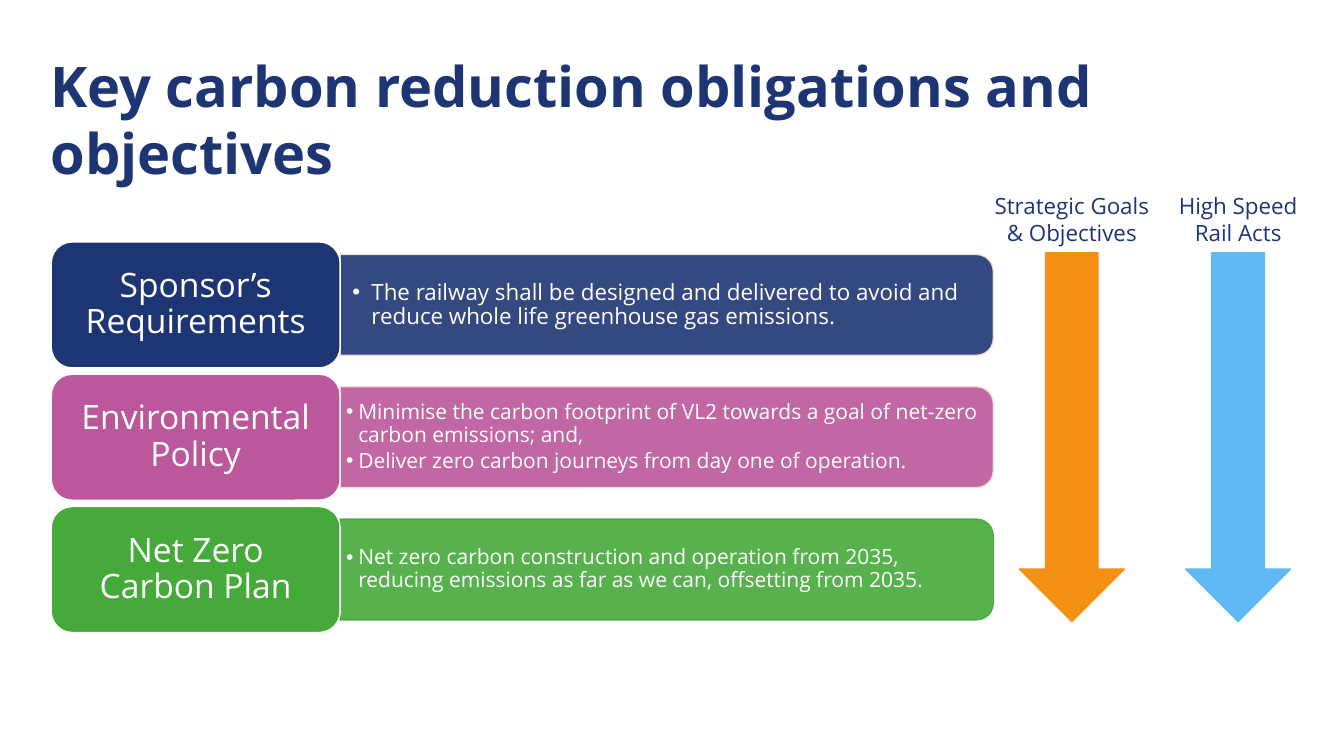
from lxml import etree
from pptx import Presentation, util as u
from pptx.dml.color import RGBColor
from pptx.enum import shapes, text
from pptx.oxml.ns import qn

FONT = "Open Sans"
COLOURS = {
    "navy": "1D3673", "pink": "BB579B", "green": "45AA3A", "orange": "F49114",
    "sky": "5EB9F4", "peach": "FBDCCC", "white": "FFFFFF",
}

# The page is a grid of 160 columns and 90 rows.
PAGE_WIDTH, PAGE_HEIGHT = u.Inches(13.33), u.Inches(7.5)
COLUMN, ROW = PAGE_WIDTH / 160, PAGE_HEIGHT / 90

NAME_LEFT, NAME_TOP, NAME_WIDTH, NAME_HEIGHT = 6.1, 28.8, 34.4, 15
ROW_PITCH = 15.75
BAR_LEFT, BAR_WIDTH, BAR_HEIGHT = NAME_LEFT + NAME_WIDTH, 77.75, 12
DETAIL_WIDTH, DETAIL_HEIGHT = 77.15, 10.8
ARROW_TOP, ARROW_WIDTH, ARROW_HEIGHT = 30.1, 12.5, 43.9
LABEL_TOP, LABEL_HEIGHT = 22.9, 6.25

# name, colour, bar outline, text size, bullet indent and side inset in inches, points
OBLIGATIONS = [
    ("Sponsor’s Requirements", "navy", "peach", 16, 0.19, 0.12,
     ["The railway shall be designed and delivered to avoid and reduce whole life "
      "greenhouse gas emissions."]),
    ("Environmental Policy", "pink", "peach", 15, 0.12, 0.06,
     ["Minimise the carbon footprint of VL2 towards a goal of net-zero carbon "
      "emissions; and,",
      "Deliver zero carbon journeys from day one of operation."]),
    ("Net Zero Carbon Plan", "green", "green", 15, 0.12, 0.06,
     ["Net zero carbon construction and operation from 2035, reducing emissions as "
      "far as we can, offsetting from 2035."]),
]

# label, label width, centre column, colour
DRIVERS = [
    ("Strategic Goals & Objectives", 18.85, 127.6, "orange"),
    ("High Speed Rail Acts", 14.3, 147.4, "sky"),
]


def grid(left, top, width, height):
    return (u.Emu(round(left * COLUMN)), u.Emu(round(top * ROW)),
            u.Emu(round(width * COLUMN)), u.Emu(round(height * ROW)))


def colour(name):
    return RGBColor.from_string(COLOURS[name])


def set_opacity(fill_parent, percent):
    """Make the solid colour inside an XML element partly see-through."""
    for value in fill_parent.find(qn("a:solidFill")):
        etree.SubElement(value, qn("a:alpha"), val=str(percent * 1000))


def add_bullet(para, indent):
    properties = para._p.get_or_add_pPr()
    properties.set("marL", str(u.Inches(indent)))
    properties.set("indent", str(-u.Inches(indent)))
    etree.SubElement(properties, qn("a:buFont"), typeface="Arial")
    etree.SubElement(properties, qn("a:buChar"), char="•")


def write(shape, lines, size, ink, bold=False, align=text.PP_ALIGN.LEFT,
          anchor=text.MSO_ANCHOR.TOP, spacing=None, after=None, bullet=None,
          insets=(0, 0)):
    """Fill a shape with paragraphs; insets are side and top, in inches."""
    frame = shape.text_frame
    frame.word_wrap = True
    frame.vertical_anchor = anchor
    frame.margin_left = frame.margin_right = u.Inches(insets[0])
    frame.margin_top = frame.margin_bottom = u.Inches(insets[1])
    for number, line in enumerate(lines):
        para = frame.paragraphs[0] if number == 0 else frame.add_paragraph()
        para.alignment = align
        if spacing:
            para.line_spacing = spacing
        if after:
            para.space_after = u.Pt(after)
        if bullet:
            add_bullet(para, bullet)
        span = para.add_run()
        span.text = line
        span.font.name, span.font.size, span.font.bold = FONT, u.Pt(size), bold
        span.font.color.rgb = colour(ink)


def add_text(page, area, lines, size, ink, **style):
    write(page.shapes.add_textbox(*area), lines, size, ink, **style)


def add_block(page, kind, area, fill, outline):
    block = page.shapes.add_shape(kind, *area)
    block.shadow.inherit = False
    block.fill.solid()
    block.fill.fore_color.rgb = colour(fill)
    block.line.color.rgb = colour(outline)
    block.line.width = u.Pt(1)
    return block


def add_bar(page, middle, fill, outline):
    """Bar with rounded right-hand corners: a top-rounded shape turned a quarter."""
    left, top, width, height = grid(BAR_LEFT, middle - BAR_HEIGHT / 2,
                                    BAR_WIDTH, BAR_HEIGHT)
    shift = (width - height) // 2
    bar = add_block(page, shapes.MSO_SHAPE.ROUND_2_SAME_RECTANGLE,
                    (left + shift, top - shift, height, width), fill, outline)
    bar.rotation = 90
    properties = bar._element.spPr
    set_opacity(properties, 90)
    set_opacity(properties.find(qn("a:ln")), 90)


def add_obligation(page, top, name, fill, outline, size, indent, inset, points):
    middle = top + NAME_HEIGHT / 2
    add_bar(page, middle, fill, outline)
    add_text(page, grid(BAR_LEFT, middle - DETAIL_HEIGHT / 2, DETAIL_WIDTH, DETAIL_HEIGHT),
             points, size, "white", anchor=text.MSO_ANCHOR.MIDDLE, spacing=0.9,
             after=2, bullet=indent, insets=(inset, inset / 2))
    block = add_block(page, shapes.MSO_SHAPE.ROUNDED_RECTANGLE,
                      grid(NAME_LEFT, top, NAME_WIDTH, NAME_HEIGHT), fill, "white")
    write(block, [name], 24, "white", align=text.PP_ALIGN.CENTER,
          anchor=text.MSO_ANCHOR.MIDDLE, spacing=0.9, insets=(0.1, 0.05))


def add_driver(page, label, label_width, centre, fill):
    add_block(page, shapes.MSO_SHAPE.DOWN_ARROW,
              grid(centre - ARROW_WIDTH / 2, ARROW_TOP, ARROW_WIDTH, ARROW_HEIGHT),
              fill, fill)
    add_text(page, grid(centre - label_width / 2, LABEL_TOP, label_width, LABEL_HEIGHT),
             [label], 16, "navy", align=text.PP_ALIGN.CENTER)


def main():
    deck = Presentation()
    deck.slide_width, deck.slide_height = PAGE_WIDTH, PAGE_HEIGHT
    page = deck.slides.add_slide(deck.slide_layouts[6])
    add_text(page, grid(6, 6.1, 148, 12.7),
             ["Key carbon reduction obligations and objectives"], 40, "navy", bold=True)
    for number, obligation in enumerate(OBLIGATIONS):
        add_obligation(page, NAME_TOP + number * ROW_PITCH, *obligation)
    for driver in DRIVERS:
        add_driver(page, *driver)
    deck.save("out.pptx")


if __name__ == "__main__":
    main()
